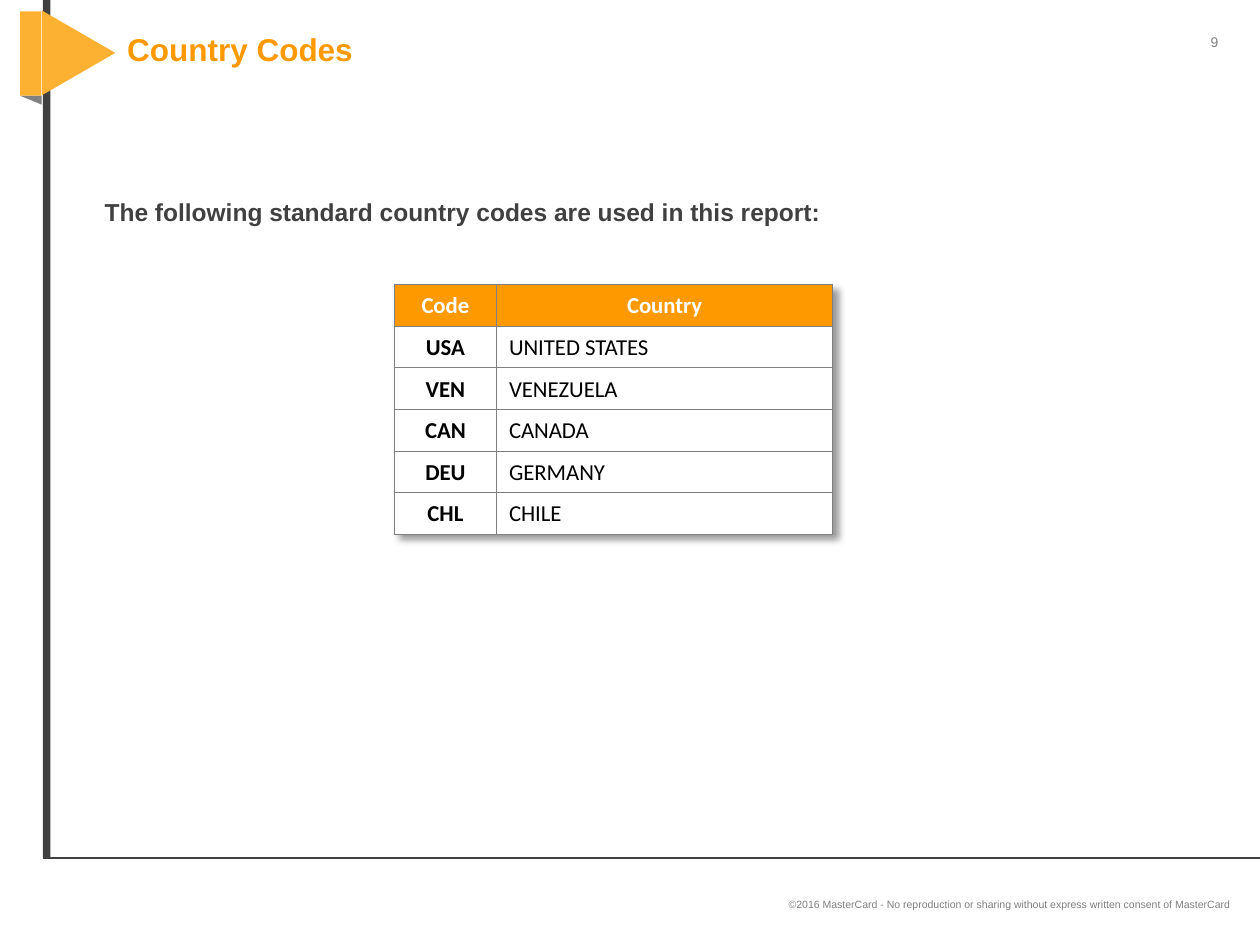
from dataclasses import dataclass
from lxml.etree import SubElement
from pptx import Presentation
from pptx.dml.color import RGBColor
from pptx.enum.shapes import MSO_CONNECTOR, MSO_SHAPE
from pptx.enum.text import MSO_ANCHOR, MSO_AUTO_SIZE, PP_ALIGN
from pptx.oxml import parse_xml
from pptx.oxml.ns import nsdecls, qn
from pptx.util import Inches, Pt


@dataclass(frozen=True)
class Theme:
    orange: str = "FF9900"
    amber: str = "FCB133"
    dark: str = "404040"
    gray: str = "808080"
    white: str = "FFFFFF"
    black: str = "000000"
    sans: str = "Arial"
    grid: str = "Calibri"
    head: int = 18
    body: int = 14
    cell: int = 13
    page: int = 8
    foot: int = 6


class Page:
    def __init__(self, slide, theme):
        self.slide = slide
        self.theme = theme

    def style(self, para, size, color, bold=False, face=None, align=PP_ALIGN.LEFT):
        para.alignment = align
        font = para.font
        font.name = face or self.theme.sans
        font.size = Pt(size)
        font.bold = bold
        font.color.rgb = RGBColor.from_string(color)

    def place(self, item, box):
        item.left, item.top, item.width, item.height = map(Inches, box)

    def title(self, text, box):
        item = self.slide.shapes.title
        self.place(item, box)
        frame = item.text_frame
        frame.text = text
        frame.auto_size = MSO_AUTO_SIZE.NONE
        frame.vertical_anchor = MSO_ANCHOR.MIDDLE
        para = frame.paragraphs[0]
        para.line_spacing = Pt(16)
        self.style(para, self.theme.head, self.theme.orange, True)

    def body(self, text, box):
        item = self.slide.placeholders[1]
        self.place(item, box)
        frame = item.text_frame
        frame.text = text
        frame.auto_size = MSO_AUTO_SIZE.NONE
        para = frame.paragraphs[0]
        props = para._p.get_or_add_pPr()
        props.set("marL", "0")
        props.set("indent", "0")
        SubElement(props, qn("a:buNone"))
        para.space_before, para.space_after = Pt(0), Pt(6)
        self.style(para, self.theme.body, self.theme.dark, True)

    def label(self, text, box, size, align, anchor=MSO_ANCHOR.TOP, wrap=True):
        frame = self.slide.shapes.add_textbox(*map(Inches, box)).text_frame
        frame.text = text
        frame.word_wrap = wrap
        frame.vertical_anchor = anchor
        self.style(frame.paragraphs[0], size, self.theme.gray, align=align)

    def shape(self, kind, box, color, turn=0):
        item = self.slide.shapes.add_shape(kind, *map(Inches, box))
        item.shadow.inherit = False
        item.fill.solid()
        item.fill.fore_color.rgb = RGBColor.from_string(color)
        item.line.fill.background()
        item.rotation = turn

    def rule(self, start, end, color):
        line = self.slide.shapes.add_connector(
            MSO_CONNECTOR.STRAIGHT, *map(Inches, start + end))
        line.line.color.rgb = RGBColor.from_string(color)
        line.line.width = Pt(0.75)
        SubElement(line._element.spPr, qn("a:effectLst"))

    def border(self, cell):
        props = cell._tc.get_or_add_tcPr()
        for pos, side in enumerate(("lnL", "lnR", "lnT", "lnB")):
            props.insert(pos, parse_xml(
                f'<a:{side} {nsdecls("a")} w="{Pt(0.5)}"><a:solidFill>'
                f'<a:srgbClr val="{self.theme.gray}"/></a:solidFill></a:{side}>'))

    def table(self, rows, spot, widths, height):
        """Draw a table whose first row is the header and first column is bold."""
        theme = self.theme
        size = (sum(widths), height * len(rows))
        table = self.slide.shapes.add_table(
            len(rows), len(widths), *map(Inches, spot + size)).table
        table._tbl.tblPr.insert(0, parse_xml(
            f'<a:effectLst {nsdecls("a")}><a:outerShdw blurRad="{Pt(4)}" '
            f'dist="{Pt(4)}" dir="2700000" algn="tl" rotWithShape="0">'
            '<a:srgbClr val="000000"><a:alpha val="40000"/></a:srgbClr>'
            '</a:outerShdw></a:effectLst>'))
        for col, width in zip(table.columns, widths):
            col.width = Inches(width)
        for r, row in enumerate(rows):
            table.rows[r].height = Inches(height)
            for c, text in enumerate(row):
                cell = table.cell(r, c)
                top, name = r == 0, r > 0 and c == 1
                cell.text = text
                cell.vertical_anchor = MSO_ANCHOR.MIDDLE
                cell.margin_left = Inches(0.1 if name else 0.01)
                cell.margin_right = cell.margin_top = Inches(0.01)
                cell.margin_bottom = 0
                cell.fill.solid()
                cell.fill.fore_color.rgb = RGBColor.from_string(
                    theme.orange if top else theme.white)
                self.border(cell)
                self.style(cell.text_frame.paragraphs[0], theme.cell,
                           theme.white if top else theme.black, not name,
                           theme.grid, PP_ALIGN.LEFT if name else PP_ALIGN.CENTER)


def main():
    deck = Presentation()
    deck.slide_width, deck.slide_height = Inches(10), Inches(7.5)
    theme = Theme()
    page = Page(deck.slides.add_slide(deck.slide_layouts[1]), theme)

    page.label("9", (9.47, 0.22, 0.34, 0.24), theme.page, PP_ALIGN.CENTER, wrap=False)
    page.label("©2016 MasterCard - No reproduction or sharing without express "
               "written consent of MasterCard", (0.11, 6.91, 9.75, 0.54),
               theme.foot, PP_ALIGN.RIGHT, MSO_ANCHOR.MIDDLE)
    page.shape(MSO_SHAPE.RECTANGLE, (0.34, 0, 0.06, 6.81), theme.dark)
    page.shape(MSO_SHAPE.RIGHT_TRIANGLE, (0.16, 0.76, 0.17, 0.07), theme.gray, 180)
    page.shape(MSO_SHAPE.ISOSCELES_TRIANGLE, (0.29, 0.13, 0.67, 0.58), theme.amber, 90)
    page.shape(MSO_SHAPE.RECTANGLE, (0.16, 0.09, 0.17, 0.67), theme.amber)
    page.rule((0.34, 6.81), (10, 6.81), theme.dark)

    page.title("Country Codes", (0.91, 0.09, 7.92, 0.67))
    page.body("The following standard country codes are used in this report:",
              (0.73, 1.51, 7.79, 4.69))
    rows = [
        ("Code", "Country"),
        ("USA", "UNITED STATES"),
        ("VEN", "VENEZUELA"),
        ("CAN", "CANADA"),
        ("DEU", "GERMANY"),
        ("CHL", "CHILE"),
    ]
    page.table(rows, (3.13, 2.26), (0.81, 2.67), 0.33)
    deck.save("out.pptx")


if __name__ == "__main__":
    main()
